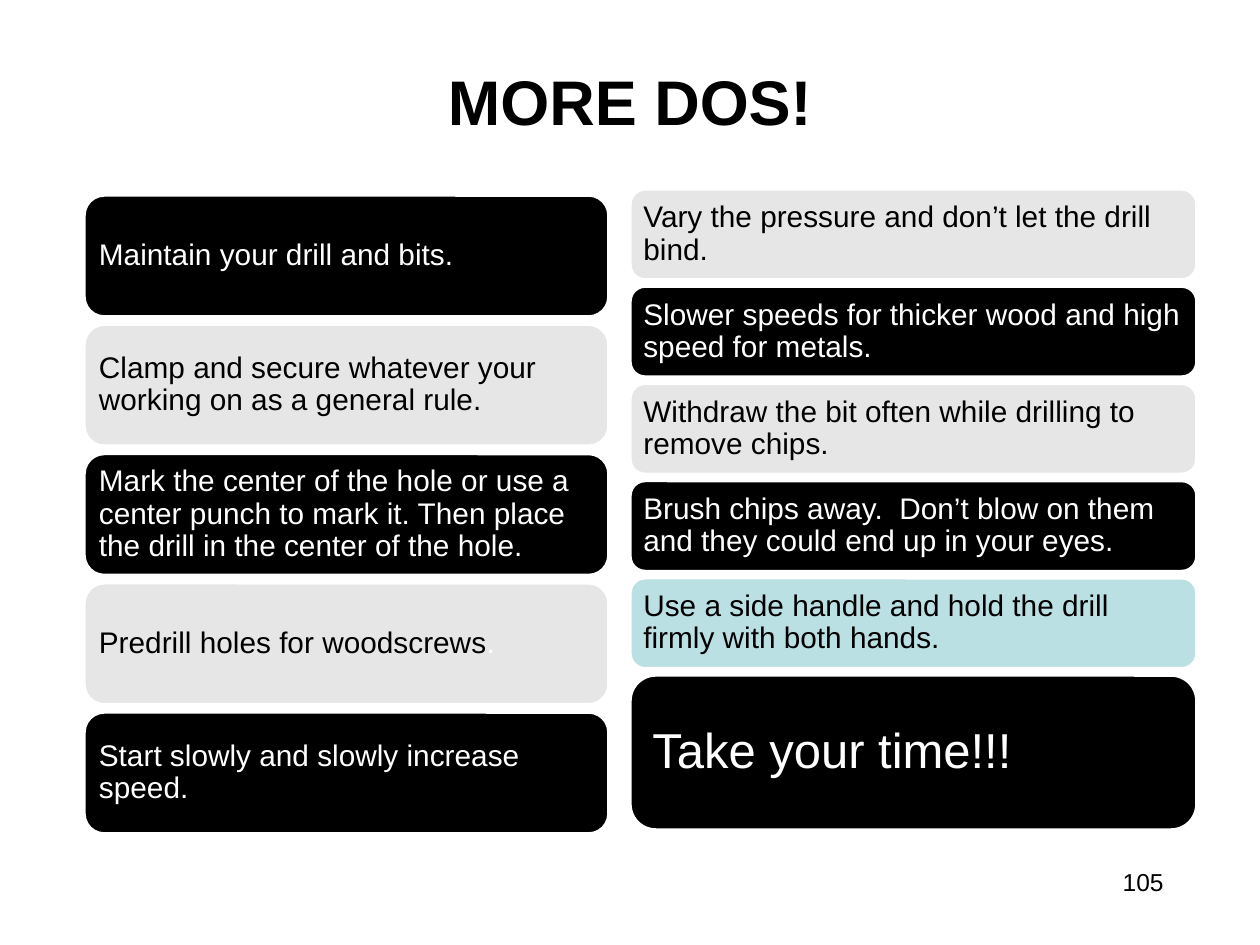
from dataclasses import dataclass

from pptx import Presentation
from pptx import util as u
from pptx.dml.color import RGBColor
from pptx.enum import shapes, text

# Content: each tip is (wording, fill name, height, type size, inset)
TITLE = "MORE DOS!"
PAGE_NUMBER = "105"
LEFT_TIPS = [
    ("Maintain your drill and bits.", "black"),
    ("Clamp and secure whatever your working on as a general rule.", "gray"),
    ("Mark the center of the hole or use a center punch to mark it. "
     "Then place the drill in the center of the hole.", "black"),
    (("Predrill holes for woodscrews", "."), "gray"),  # the full stop is white
    ("Start slowly and slowly increase speed.", "black"),
]
RIGHT_TIPS = [
    ("Vary the pressure and don’t let the drill bind.", "gray"),
    ("Slower speeds for thicker wood and high speed for metals.", "black"),
    ("Withdraw the bit often while drilling to remove chips.", "gray"),
    ("Brush chips away.  Don’t blow on them and they could end up in your eyes.",
     "black"),
    ("Use a side handle and hold the drill firmly with both hands.", "teal"),
    ("Take your time!!!", "black"),
]


@dataclass(frozen=True)
class Theme:
    font: str = "Arial"
    black: str = "000000"
    white: str = "FFFFFF"
    gray: str = "E6E6E6"
    teal: str = "BBE0E3"
    title: int = 36
    tip: int = 17
    closing: int = 28
    page: int = 14


THEME = Theme()
PX = 914400 / 126


def px(length):
    return u.Emu(round(length * PX))


def color(name):
    return RGBColor.from_string(getattr(THEME, name))


def style(paragraph, size, color_name, bold=False):
    font = paragraph.font
    font.name, font.size, font.bold = THEME.font, u.Pt(size), bold
    font.color.rgb = color(color_name)


def add_label(slide, wording, box, size, align, bold=False):
    frame = slide.shapes.add_textbox(*map(px, box)).text_frame
    frame.word_wrap = True
    paragraph = frame.paragraphs[0]
    paragraph.text = wording
    paragraph.alignment = align
    style(paragraph, size, "black", bold)
    return frame


def add_tip(slide, wording, fill, box, size, inset):
    card = slide.shapes.add_shape(
        shapes.MSO_SHAPE.ROUNDED_RECTANGLE, *map(px, box))
    card.shadow.inherit = False
    card.fill.solid()
    card.fill.fore_color.rgb = color(fill)
    card.line.color.rgb = color("white")
    card.line.width = u.Pt(2)

    frame = card.text_frame
    frame.word_wrap = True
    frame.vertical_anchor = text.MSO_ANCHOR.MIDDLE
    frame.margin_left = frame.margin_right = px(inset)
    frame.margin_top = frame.margin_bottom = px(inset)
    paragraph = frame.paragraphs[0]
    paragraph.alignment = text.PP_ALIGN.LEFT
    paragraph.line_spacing = 0.9
    style(paragraph, size, "white" if fill == "black" else "black")
    body, *stop = (wording,) if isinstance(wording, str) else wording
    paragraph.add_run().text = body
    for mark in stop:
        run = paragraph.add_run()
        run.text = mark
        run.font.color.rgb = color("white")


def add_column(slide, tips, left, width, top, bottom, height, closing_height=None):
    """Stack the tips from top to bottom with equal gaps."""
    heights = [height] * len(tips)
    if closing_height:
        heights[-1] = closing_height
    gap = (bottom - top - sum(heights)) / (len(tips) - 1)
    for (wording, fill), tall in zip(tips, heights):
        closing = tall == closing_height
        add_tip(slide, wording, fill, (left, top, width, tall),
                THEME.closing if closing else THEME.tip, 15 if closing else 9)
        top += tall + gap


def main():
    deck = Presentation()
    deck.slide_width, deck.slide_height = px(1260), px(945)
    slide = deck.slides.add_slide(deck.slide_layouts[6])

    # Title
    title = add_label(slide, TITLE, (0, 21, 1260, 158), THEME.title,
                      text.PP_ALIGN.CENTER, bold=True)
    title.vertical_anchor = text.MSO_ANCHOR.MIDDLE

    # Two columns of tips
    add_column(slide, LEFT_TIPS, left=84, width=525, top=195, bottom=834, height=122)
    add_column(slide, RIGHT_TIPS, left=630, width=567, top=189, bottom=830,
               height=91, closing_height=155)

    # Page number
    add_label(slide, PAGE_NUMBER, (903, 861, 273, 66), THEME.page,
              text.PP_ALIGN.RIGHT)

    deck.save("out.pptx")


if __name__ == "__main__":
    main()
